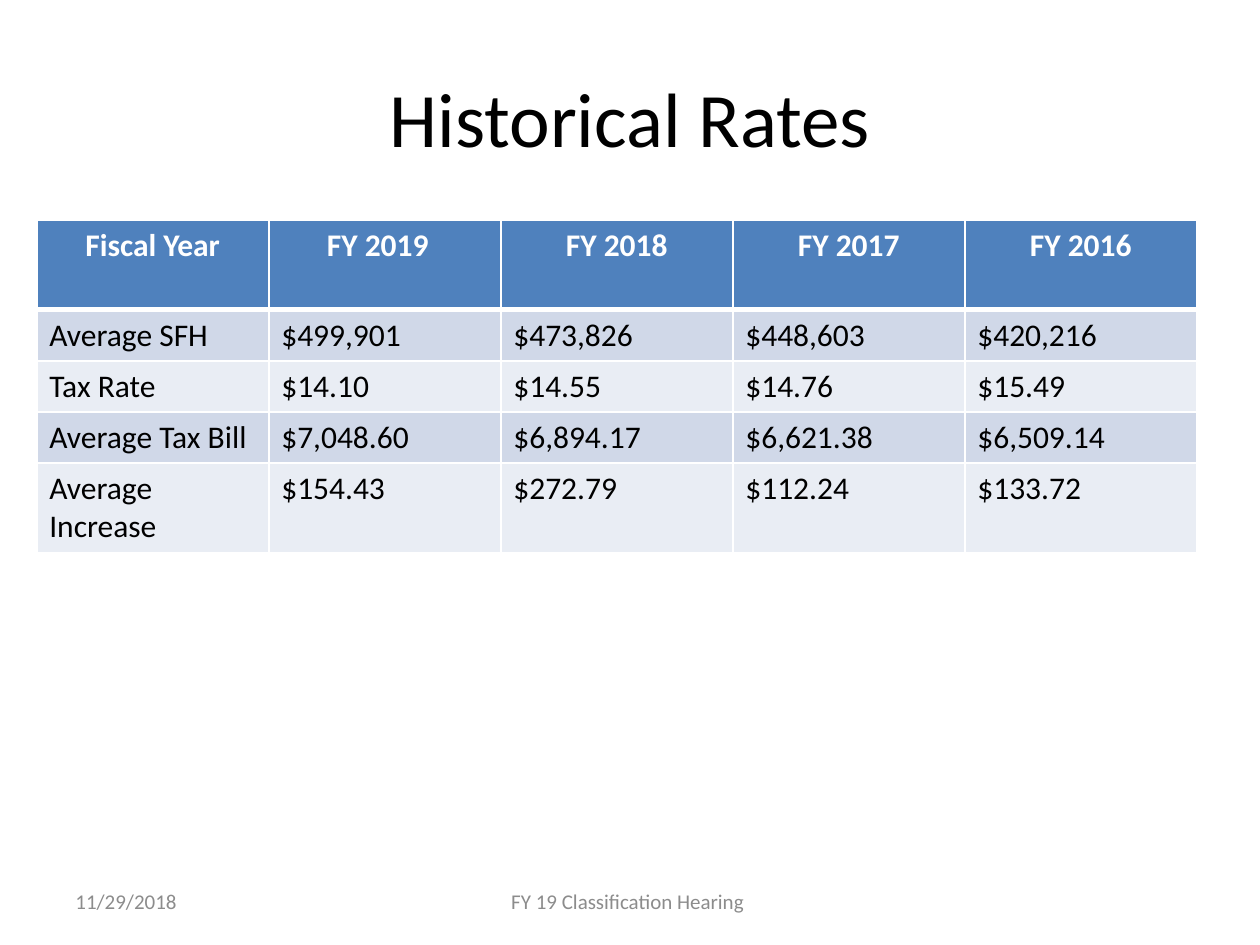
from lxml import etree
from pptx import Presentation
from pptx.dml.color import RGBColor
from pptx.enum.text import MSO_ANCHOR, PP_ALIGN
from pptx.oxml.ns import qn
from pptx.util import Pt

LEFT, CENTER = PP_ALIGN.LEFT, PP_ALIGN.CENTER
MIDDLE = MSO_ANCHOR.MIDDLE

FONT = "Calibri"
BLACK, WHITE, GREY = "000000", "FFFFFF", "8C8C8C"
HEADER_FILL = "4F81BD"
BAND_FILLS = ("D0D8E8", "E9EDF4")

RATES = [
    ("Fiscal Year", "FY 2019", "FY 2018", "FY 2017", "FY 2016"),
    ("Average SFH", "$499,901", "$473,826", "$448,603", "$420,216"),
    ("Tax Rate", "$14.10", "$14.55", "$14.76", "$15.49"),
    ("Average Tax Bill", "$7,048.60", "$6,894.17", "$6,621.38", "$6,509.14"),
    ("Average Increase", "$154.43", "$272.79", "$112.24", "$133.72"),
]
ROW_HEIGHTS = (51, 29.15, 29.15, 29.15, 51)
COLUMN_WIDTH = 132.6


def rgb(hex_color):
    return RGBColor.from_string(hex_color)


def write(frame, text, size, color, align=LEFT, bold=False):
    frame.text = text
    paragraph = frame.paragraphs[0]
    paragraph.alignment = align
    font = paragraph.runs[0].font
    font.name, font.size, font.bold = FONT, Pt(size), bold
    font.color.rgb = rgb(color)


def set_borders(cell, top=1, bottom=1):
    """Draw white cell borders; the schema wants them ahead of the fill."""
    properties = cell._tc.get_or_add_tcPr()
    widths = {"a:lnL": 1, "a:lnR": 1, "a:lnT": top, "a:lnB": bottom}
    for position, (tag, width) in enumerate(widths.items()):
        line = etree.Element(qn(tag), w=str(Pt(width)))
        fill = etree.SubElement(line, qn("a:solidFill"))
        etree.SubElement(fill, qn("a:srgbClr"), val=WHITE)
        properties.insert(position, line)


def add_title(slide, text):
    title = slide.shapes.title
    title.left, title.top = Pt(36), Pt(21.6)
    title.width, title.height = Pt(648), Pt(90)
    title.text_frame.vertical_anchor = MIDDLE
    write(title.text_frame, text, 44, BLACK, CENTER)


def add_rates_table(slide):
    columns = len(RATES[0])
    table = slide.shapes.add_table(
        len(RATES), columns, Pt(21), Pt(126),
        Pt(COLUMN_WIDTH * columns), Pt(sum(ROW_HEIGHTS))).table
    for column in table.columns:
        column.width = Pt(COLUMN_WIDTH)
    for r, values in enumerate(RATES):
        table.rows[r].height = Pt(ROW_HEIGHTS[r])
        is_header = r == 0
        for c, value in enumerate(values):
            cell = table.cell(r, c)
            cell.fill.solid()
            cell.fill.fore_color.rgb = rgb(
                HEADER_FILL if is_header else BAND_FILLS[(r - 1) % 2])
            write(cell.text_frame, value, 18,
                  WHITE if is_header else BLACK,
                  CENTER if is_header else LEFT, is_header)
            set_borders(cell, top=3 if r == 1 else 1,
                        bottom=3 if is_header else 1)
    # The latest year sits slightly left of its column's centre.
    table.cell(0, 1).margin_right = Pt(15.2)


def add_footer(slide, text, left, width, align):
    frame = slide.shapes.add_textbox(
        Pt(left), Pt(500.4), Pt(width), Pt(28.8)).text_frame
    frame.word_wrap = True
    frame.vertical_anchor = MIDDLE
    write(frame, text, 12, GREY, align)


def main():
    deck = Presentation()
    deck.slide_width, deck.slide_height = Pt(720), Pt(540)
    slide = deck.slides.add_slide(deck.slide_layouts[5])
    add_title(slide, "Historical Rates")
    add_rates_table(slide)
    add_footer(slide, "11/29/2018", 36, 168, LEFT)
    add_footer(slide, "FY 19 Classification Hearing ", 246, 228, CENTER)
    deck.save("out.pptx")


if __name__ == "__main__":
    main()
